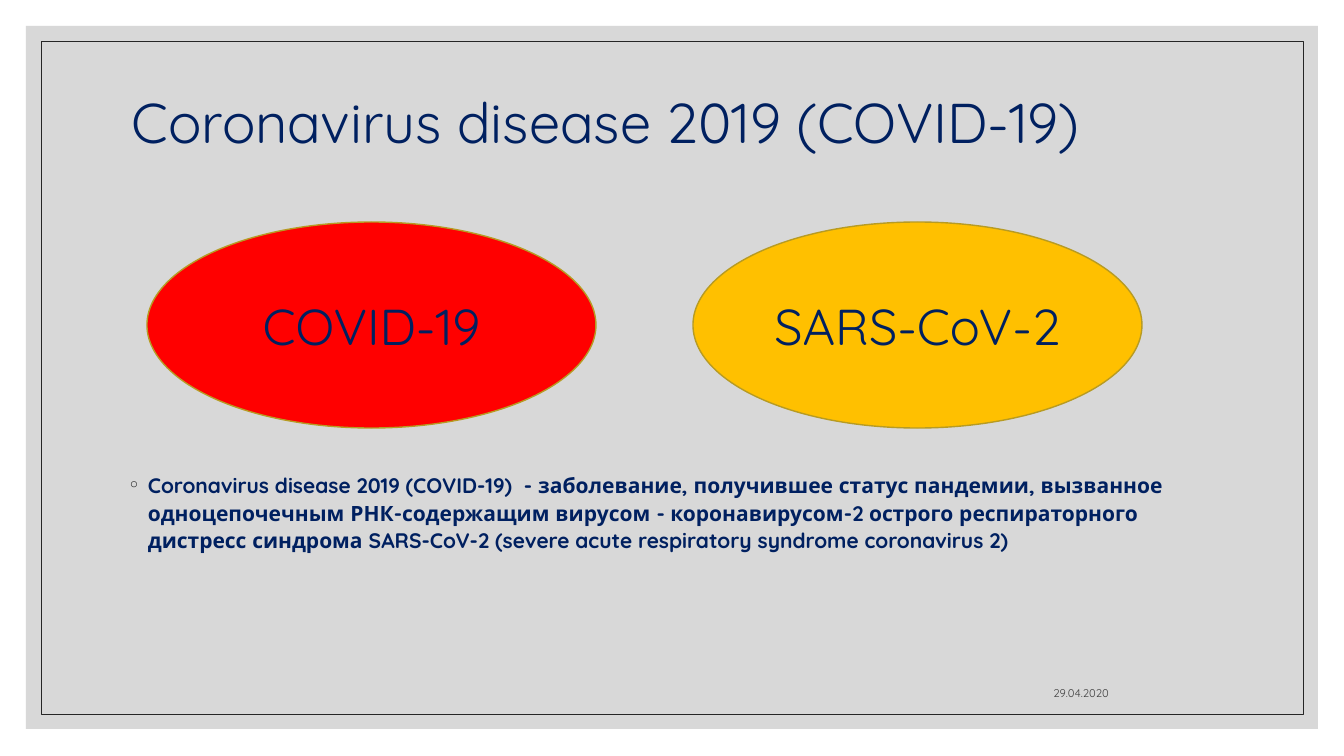
from pptx import Presentation, util as u
from pptx.dml import color
from pptx.enum import shapes, text
from pptx.oxml import ns
from lxml import etree

PX = 914400 / 100.8
FONT = "Quicksand"
NAVY, INK, GOLD = "002060", "262626", "B79B23"


def px(length):
    return u.Emu(round(length * PX))


def rgb(code):
    return color.RGBColor.from_string(code)


def add_span(para, words, size, tint=NAVY, bold=False):
    span = para.add_run()
    span.text = words
    span.font.name = FONT
    span.font.size = u.Pt(size)
    span.font.bold = bold
    span.font.color.rgb = rgb(tint)


def add_text(page, box, anchor):
    """Add a wrapping text box and return its first paragraph."""
    frame = page.shapes.add_textbox(*map(px, box)).text_frame
    frame.word_wrap = True
    frame.vertical_anchor = anchor
    return frame.paragraphs[0]


def add_figure(page, kind, box, fill=None, line=None, width=1):
    figure = page.shapes.add_shape(kind, *map(px, box))
    figure.shadow.inherit = False
    if fill:
        figure.fill.solid()
        figure.fill.fore_color.rgb = rgb(fill)
    else:
        figure.fill.background()
    if line:
        figure.line.color.rgb = rgb(line)
        figure.line.width = u.Pt(width)
    else:
        figure.line.fill.background()
    return figure


def add_bullet(para, mark, tint, indent):
    props = para._p.get_or_add_pPr()
    props.set("marL", str(px(indent)))
    props.set("indent", str(-px(indent)))
    holder = etree.SubElement(props, ns.qn("a:buClr"))
    etree.SubElement(holder, ns.qn("a:srgbClr"), val=tint)
    etree.SubElement(props, ns.qn("a:buFont"), typeface=FONT)
    etree.SubElement(props, ns.qn("a:buChar"), char=mark)


def draw_frame(page, box):
    """Translucent grey panel with a thin line inside it."""
    left, top, width, height = box
    rectangle = shapes.MSO_SHAPE.RECTANGLE
    panel = add_figure(page, rectangle, box, fill="BFBFBF")
    tint = panel._element.spPr.find(".//" + ns.qn("a:srgbClr"))
    etree.SubElement(tint, ns.qn("a:alpha"), val="60000")
    gap = 15
    inner = (left + gap, top + gap, width - 2 * gap, height - 2 * gap)
    add_figure(page, rectangle, inner, line=INK, width=0.5)


def draw_title(page, box, words):
    para = add_text(page, box, text.MSO_ANCHOR.MIDDLE)
    para.line_spacing = 0.9
    add_span(para, words, 40)


def draw_definition(page, box, words):
    para = add_text(page, box, text.MSO_ANCHOR.TOP)
    add_bullet(para, "◦", INK, 20)
    para.line_spacing = 1.1
    add_span(para, words, 15, bold=True)


def draw_date(page, box, words):
    para = add_text(page, box, text.MSO_ANCHOR.BOTTOM)
    para.alignment = text.PP_ALIGN.RIGHT
    add_span(para, words, 8, "404040")


def draw_ovals(page, box, ovals, gap):
    """Equal ovals side by side across the box."""
    left, top, width, height = box
    oval_width = (width - gap * (len(ovals) - 1)) // len(ovals)
    for index, (words, fill) in enumerate(ovals):
        place = (left + index * (oval_width + gap), top, oval_width, height)
        oval = add_figure(page, shapes.MSO_SHAPE.OVAL, place, fill, GOLD)
        oval.text_frame.vertical_anchor = text.MSO_ANCHOR.MIDDLE
        para = oval.text_frame.paragraphs[0]
        para.alignment = text.PP_ALIGN.CENTER
        add_span(para, words, 36)


def main():
    deck = Presentation()
    deck.slide_width, deck.slide_height = px(1344), px(756)
    page = deck.slides.add_slide(deck.slide_layouts[6])

    # Background and heading
    draw_frame(page, (26, 26, 1292, 703))
    draw_title(page, (122, 50, 1109, 151), "Coronavirus disease 2019 (COVID-19)")

    # Definition and date
    draw_definition(
        page, (118, 465, 1109, 191),
        "Coronavirus disease 2019 (COVID-19)  - заболевание, получившее статус "
        "пандемии, вызванное одноцепочечным РНК-содержащим вирусом - "
        "коронавирусом-2 острого респираторного дистресс синдрома SARS-CoV-2 "
        "(severe acute respiratory syndrome coronavirus 2)")
    draw_date(page, (800, 665, 319, 40), "29.04.2020")

    # Disease and virus
    draw_ovals(page, (147, 222, 995, 206),
               [("COVID-19", "FF0000"), ("SARS-CoV-2", "FFC000")], gap=97)

    deck.save("out.pptx")


if __name__ == "__main__":
    main()
